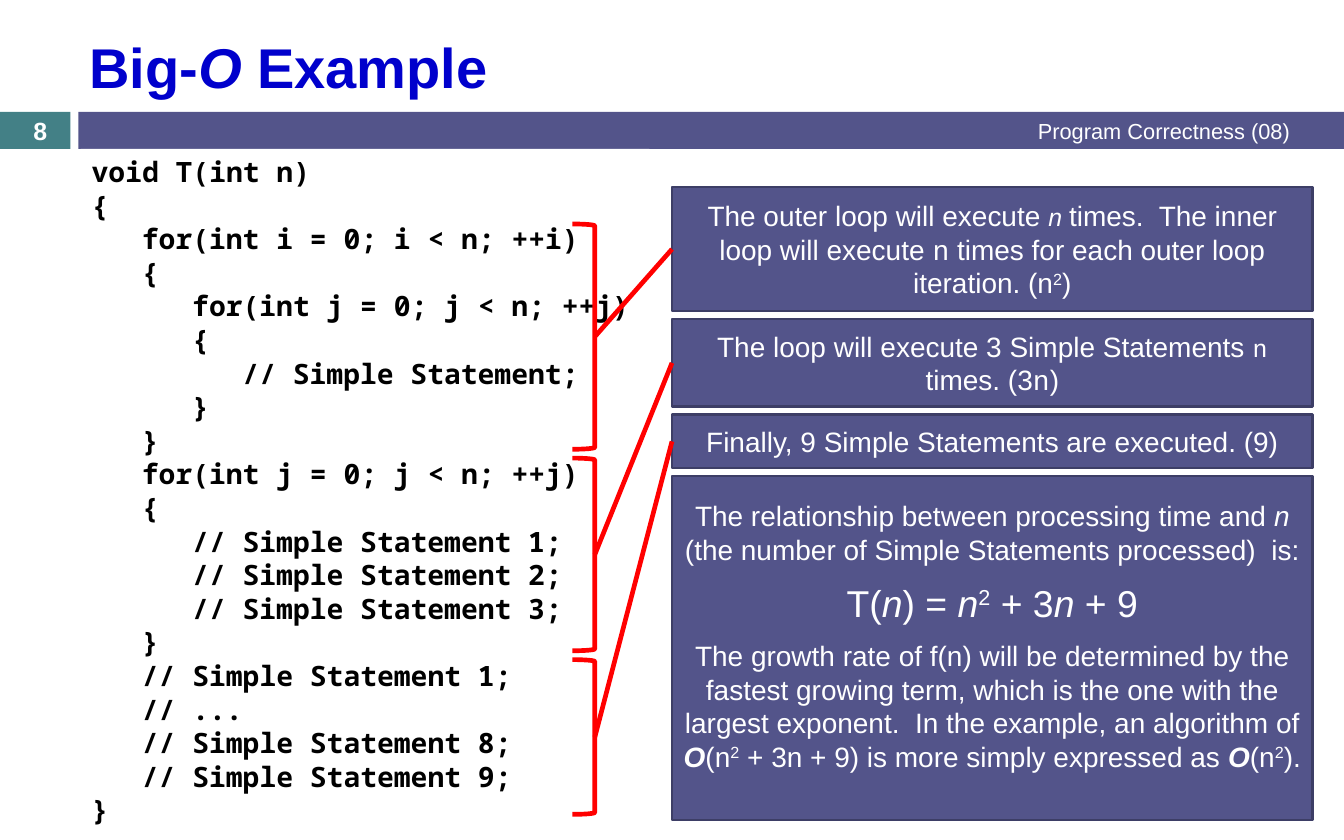
from pptx import Presentation
from pptx.dml.color import RGBColor
from pptx.enum.shapes import MSO_CONNECTOR, MSO_SHAPE
from pptx.enum.text import MSO_ANCHOR, PP_ALIGN
from pptx.oxml.ns import qn
from pptx.util import Cm, Pt
from lxml.etree import SubElement

WHITE, PURPLE, RED = "FFFFFF", "53548A", "FF0000"
ITALIC = {"italic": True}
STRONG = {"italic": True, "bold": True}
RAISED = {"baseline": 30000}
COURIER = {"name": "Courier New"}

CODE = """void T(int n)
{
   for(int i = 0; i < n; ++i)
   {
      for(int j = 0; j < n; ++j)
      {
         // Simple Statement;
      }
   }
   for(int j = 0; j < n; ++j)
   {
      // Simple Statement 1;
      // Simple Statement 2;
      // Simple Statement 3;
   }
   // Simple Statement 1;
   // ...
   // Simple Statement 8;
   // Simple Statement 9;
}"""

OUTER_LOOP = ["The outer loop will execute ", ("n ", {"italic": True, "size": Pt(16)}),
              "times.  The inner loop will execute ", ("n", COURIER),
              " times for each outer loop iteration. (n", ("2", RAISED), ")"]
SINGLE_LOOP = ["The loop will execute 3 Simple Statements ",
               ("n ", {"name": "Courier New", "size": Pt(16)}),
               "times. (3", ("n", COURIER), ")"]
STATEMENTS = ["Finally, 9 Simple Statements are executed. (9)"]
RELATIONSHIP = ["The relationship between processing time and ", ("n", ITALIC),
                " (the number of Simple Statements processed)  is:"]
FORMULA = ["T(", ("n", ITALIC), ") = ", ("n", ITALIC), ("2", RAISED),
           " + 3", ("n", ITALIC), " + 9"]
GROWTH = ["The growth rate of f(n) will be determined by the fastest growing term, "
          "which is the one with the largest exponent.  In the example, an algorithm of ",
          ("O", STRONG), "(n", ("2", RAISED), " + 3n + 9) is more simply expressed as ",
          ("O", STRONG), "(n", ("2", RAISED), ")."]


def color(value):
    return RGBColor.from_string(value)


def lengths(box):
    return [Cm(value) for value in box]


def write(para, spans, size, ink=WHITE, bold=False, align=PP_ALIGN.CENTER, name="Arial"):
    para.alignment = align
    para.font.name, para.font.size, para.font.bold = name, Pt(size), bold
    para.font.color.rgb = color(ink)
    for item in spans:
        text, style = (item, {}) if isinstance(item, str) else item
        span = para.add_run()
        span.text = text
        for key, value in style.items():
            if key == "baseline":
                span._r.get_or_add_rPr().set(key, str(value))
            else:
                setattr(span.font, key, value)


def add_block(page, box, fill=None, line=None, width=1.5, preset=MSO_SHAPE.RECTANGLE):
    block = page.shapes.add_shape(preset, *lengths(box))
    block.shadow.inherit = False
    if fill:
        block.fill.solid()
        block.fill.fore_color.rgb = color(fill)
    else:
        block.fill.background()
    if line:
        block.line.color.rgb = color(line)
        block.line.width = Pt(width)
    else:
        block.line.fill.background()
    return block


def add_label(page, box, spans, size, **style):
    frame = page.shapes.add_textbox(*lengths(box)).text_frame
    frame.word_wrap = True
    frame.vertical_anchor = MSO_ANCHOR.MIDDLE
    write(frame.paragraphs[0], spans, size, **style)


def add_header(page, box):
    left, top, width, height = box
    add_block(page, (0, top, 1.6, height), "438086")
    add_block(page, box, PURPLE)
    add_label(page, (left, 0.48, 27.71, 2.03), ["Big-", ("O", ITALIC), " Example"], 36,
              ink="0000CC", bold=True, align=PP_ALIGN.LEFT)
    add_label(page, (15.67, top, 13.84, height), ["Program Correctness (08)"], 14,
              align=PP_ALIGN.RIGHT)
    add_label(page, (0, top, 1.83, height), ["8"], 16, bold=True)


def add_code(page, box):
    frame = add_block(page, box, WHITE).text_frame
    frame.word_wrap = True
    frame.vertical_anchor = MSO_ANCHOR.TOP
    for index, line in enumerate(CODE.split("\n")):
        para = frame.add_paragraph() if index else frame.paragraphs[0]
        text = line.lstrip()
        write(para, [text], 18, ink="000000", bold=True, align=PP_ALIGN.LEFT,
              name="Noto Sans Mono")
        para.line_spacing = Pt(21.6)
        indent = Cm(0.38 * (len(line) - len(text)))
        para._p.get_or_add_pPr().set("marL", str(indent))


def add_callout(page, box, paragraphs):
    callout = add_block(page, box, PURPLE, "3D3E66")
    frame = callout.text_frame
    frame.word_wrap = True
    frame.vertical_anchor = MSO_ANCHOR.MIDDLE
    for index, (spans, size) in enumerate(paragraphs):
        para = frame.add_paragraph() if index else frame.paragraphs[0]
        write(para, spans, size)
        if index:
            para.space_before = Pt(9)
    return callout


def add_bracket(page, box, callout):
    bracket = add_block(page, box, line=RED, width=3, preset=MSO_SHAPE.RIGHT_BRACKET)
    link = page.shapes.add_connector(
        MSO_CONNECTOR.STRAIGHT, callout.left, callout.top + callout.height // 2,
        bracket.left + bracket.width, bracket.top + bracket.height // 2)
    link.begin_connect(callout, 1)
    link.line.color.rgb = color(RED)
    link.line.width = Pt(3)
    SubElement(link._element.spPr, qn("a:effectLst"))


def add_explanations(page, box):
    left, top, width, height = box
    bracket_top, gap = 5.08, 0.18
    bottom = top + height
    for spans, tall, bracket_tall in ((OUTER_LOOP, 2.82, 5.11),
                                      (SINGLE_LOOP, 1.98, 4.37),
                                      (STATEMENTS, 1.22, 3.51)):
        callout = add_callout(page, (left, top, width, tall), [(spans, 18)])
        add_bracket(page, (12.98, bracket_top, 0.51, bracket_tall), callout)
        top += tall + gap
        bracket_top += bracket_tall + 0.2
    summary = add_callout(page, (left, top, width, bottom - top),
                          [(RELATIONSHIP, 18), (FORMULA, 24), (GROWTH, 18)])
    summary.text_frame.margin_bottom = Cm(0.69)


def main():
    deck = Presentation()
    deck.slide_width, deck.slide_height = Cm(30.48), Cm(19.05)
    page = deck.slides.add_slide(deck.slide_layouts[6])
    add_header(page, (1.78, 2.54, 28.7, 0.84))
    add_code(page, (1.83, 3.38, 12.9, 15.65))
    add_explanations(page, (15.24, 4.24, 14.53, 14.36))
    deck.save("out.pptx")


if __name__ == "__main__":
    main()
